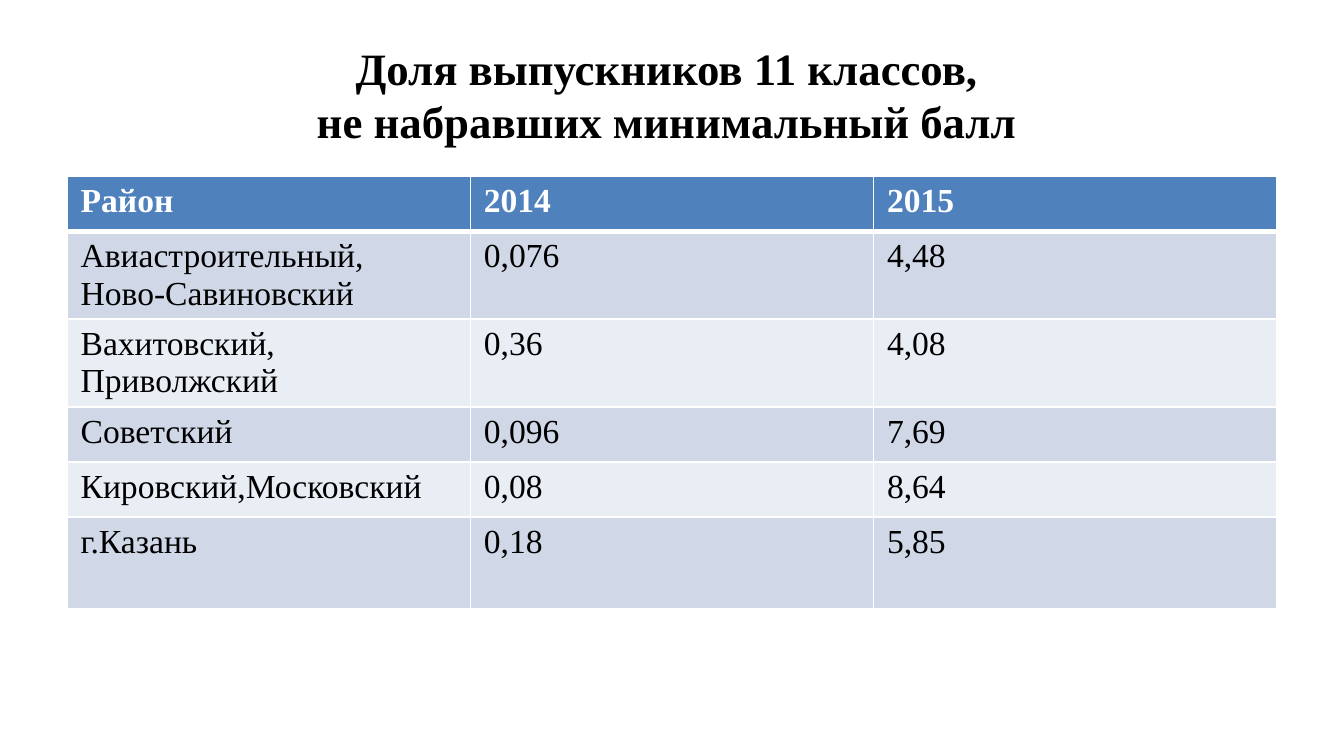
from dataclasses import dataclass

from lxml.etree import SubElement
from pptx import Presentation
from pptx.dml.color import RGBColor
from pptx.enum.text import MSO_ANCHOR, MSO_AUTO_SIZE, PP_ALIGN
from pptx.oxml.ns import qn
from pptx.slide import Slide
from pptx.table import _Cell as Cell
from pptx.text.text import TextFrame
from pptx.util import Inches, Pt

FONT = "Times New Roman"
BLACK, WHITE = "000000", "FFFFFF"
HEADER_FILL = "4F81BD"
BAND_FILLS = ("E9EDF4", "D0D8E8")
LEFT, WIDTH = 0.5, 9


@dataclass
class Row:
    height: float
    texts: tuple[str, ...]


ROWS = [
    Row(0.41, ("Район", "2014", "2015")),
    Row(0.65, ("Авиастроительный,\nНово-Савиновский", "0,076", "4,48")),
    Row(0.65, ("Вахитовский, Приволжский", "0,36", "4,08")),
    Row(0.41, ("Советский", "0,096", "7,69")),
    Row(0.41, ("Кировский,Московский", "0,08", "8,64")),
    Row(0.68, ("г.Казань", "0,18", "5,85")),
]


def color(value: str) -> RGBColor:
    return RGBColor.from_string(value)


def format_text(frame: TextFrame, size: float, bold: bool, ink: str) -> None:
    for para in frame.paragraphs:
        for span in para.runs:
            span.font.name = FONT
            span.font.size = Pt(size)
            span.font.bold = bold
            span.font.color.rgb = color(ink)


def add_border(cell: Cell, side: str, width: float, ink: str) -> None:
    properties = cell._tc.get_or_add_tcPr()
    line = SubElement(properties, qn(f"a:{side}"), w=str(Pt(width)))
    fill = SubElement(line, qn("a:solidFill"))
    SubElement(fill, qn("a:srgbClr"), val=str(color(ink)))


def add_title(page: Slide, text: str) -> None:
    box = page.shapes.title
    box.left, box.top = Inches(LEFT), Inches(0.23)
    box.width, box.height = Inches(WIDTH), Inches(0.94)
    frame = box.text_frame
    frame.auto_size = MSO_AUTO_SIZE.NONE
    frame.vertical_anchor = MSO_ANCHOR.MIDDLE
    frame.paragraphs[0].text = text
    frame.paragraphs[0].alignment = PP_ALIGN.CENTER
    format_text(frame, 24, True, BLACK)


def add_district_table(page: Slide, rows: list[Row]) -> None:
    height = sum(row.height for row in rows)
    table = page.shapes.add_table(
        len(rows), len(rows[0].texts),
        Inches(LEFT), Inches(1.31), Inches(WIDTH), Inches(height),
    ).table
    for row_index, row in enumerate(rows):
        header = row_index == 0
        table.rows[row_index].height = Inches(row.height)
        for column_index, text in enumerate(row.texts):
            cell = table.cell(row_index, column_index)
            for side in ("lnL", "lnR", "lnT", "lnB"):
                header_edge = (row_index, side) in ((0, "lnB"), (1, "lnT"))
                add_border(cell, side, 3 if header_edge else 1, WHITE)
            cell.fill.solid()
            cell.fill.fore_color.rgb = color(
                HEADER_FILL if header else BAND_FILLS[row_index % 2]
            )
            cell.text_frame.text = text
            format_text(cell.text_frame, 18, header, WHITE if header else BLACK)


def main() -> None:
    deck = Presentation()
    deck.slide_width = Inches(10)
    deck.slide_height = deck.slide_width * 9 // 16
    page = deck.slides.add_slide(deck.slide_layouts[5])
    add_title(page, "Доля выпускников 11 классов, \vне набравших минимальный балл ")
    add_district_table(page, ROWS)
    deck.save("out.pptx")


if __name__ == "__main__":
    main()
